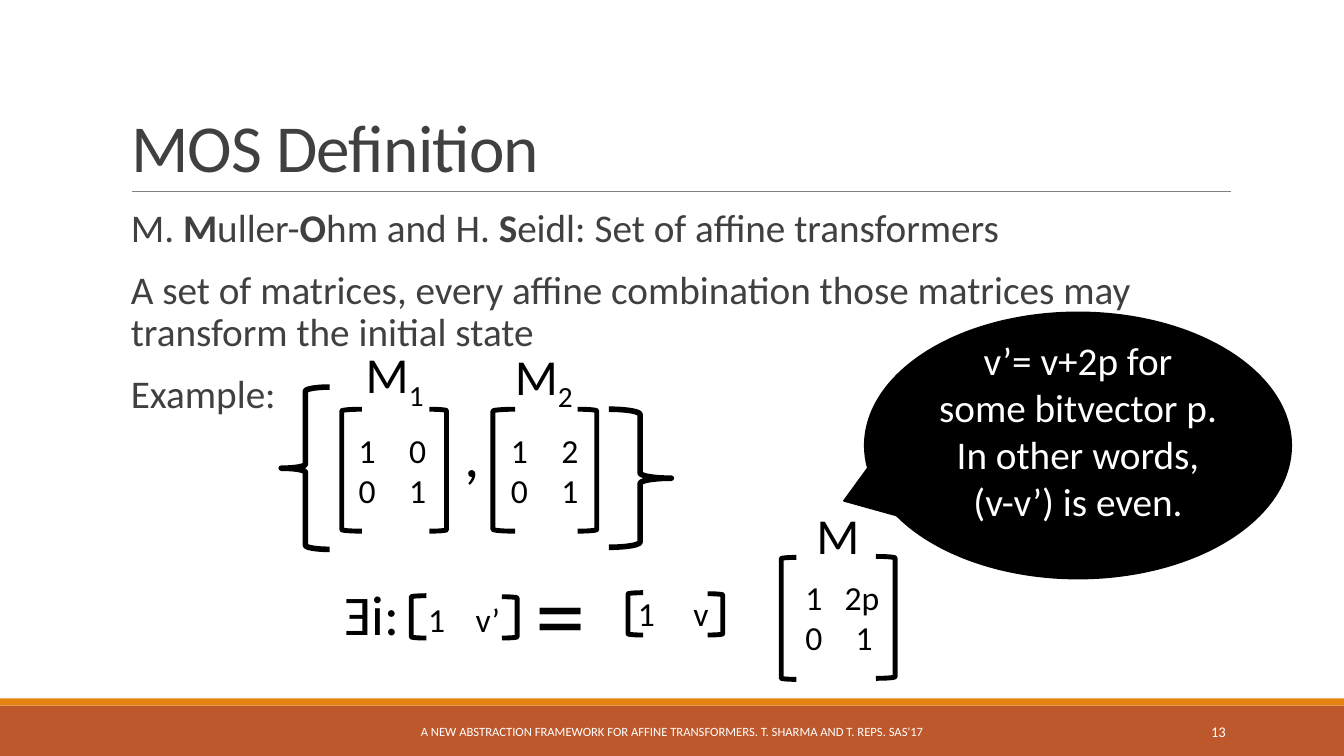
from dataclasses import dataclass
from typing import Any, NamedTuple

from lxml.etree import SubElement
from pptx import Presentation
from pptx.dml.color import RGBColor
from pptx.enum.shapes import MSO_CONNECTOR, MSO_SHAPE
from pptx.enum.text import MSO_ANCHOR, MSO_AUTO_SIZE, PP_ALIGN
from pptx.oxml.ns import qn
from pptx.util import Inches, Pt

ROWS = 75
SLIDE_W, SLIDE_H = Inches(13.333), Inches(7.5)
CELL = SLIDE_H / ROWS
COLS = SLIDE_W / CELL
BLACK, WHITE, GREY = "000000", "FFFFFF", "404040"
LEFT, CENTER, RIGHT = PP_ALIGN.LEFT, PP_ALIGN.CENTER, PP_ALIGN.RIGHT


class Box(NamedTuple):
    col: float
    row: float
    cols: float
    rows: float


class Run(NamedTuple):
    text: str
    bold: bool = False
    baseline: int = 0


class Para(NamedTuple):
    runs: list[Run]
    tab: float = 0


@dataclass
class Label:
    box: Box
    paras: list[Para]
    size: float
    color: str = BLACK
    align: Any = LEFT


@dataclass
class Outline:
    kind: Any
    box: Box
    weight: float = 3.5


def grid(n: float) -> int:
    return round(n * CELL)


def place(box: Box) -> list[int]:
    return [grid(n) for n in box]


def rgb(value: str) -> RGBColor:
    return RGBColor.from_string(value)


def apply(target: Any, values: dict[str, Any]) -> None:
    for name, value in values.items():
        setattr(target, name, value)


def line(text: str, tab: float = 0) -> Para:
    return Para([Run(text)], tab)


def write(tf: Any, paras: list[Para], size: float, color: str,
          frame: dict[str, Any], para: dict[str, Any]) -> None:
    apply(tf, {"word_wrap": True, "auto_size": MSO_AUTO_SIZE.NONE,
               "vertical_anchor": MSO_ANCHOR.MIDDLE} | frame)
    for i, item in enumerate(paras):
        p = tf.paragraphs[0] if i == 0 else tf.add_paragraph()
        apply(p, para)
        if item.tab:
            tabs = SubElement(p._p.get_or_add_pPr(), qn("a:tabLst"))
            SubElement(tabs, qn("a:tab"), pos=str(grid(item.tab)), algn="l")
        for run in item.runs:
            r = p.add_run()
            r.text = run.text
            apply(r.font, {"name": "Calibri", "size": Pt(size), "bold": run.bold})
            r.font.color.rgb = rgb(color)
            if run.baseline:
                r._r.get_or_add_rPr().set("baseline", str(run.baseline))


def add_label(s: Any, label: Label) -> None:
    tb = s.shapes.add_textbox(*place(label.box))
    write(tb.text_frame, label.paras, label.size, label.color, {},
          {"alignment": label.align})


def add_filled(s: Any, kind: Any, box: Box, color: str) -> Any:
    sp = s.shapes.add_shape(kind, *place(box))
    sp.shadow.inherit = False
    sp.fill.solid()
    sp.fill.fore_color.rgb = rgb(color)
    sp.line.fill.background()
    return sp


def add_outline(s: Any, outline: Outline) -> None:
    sp = s.shapes.add_shape(outline.kind, *place(outline.box))
    sp.shadow.inherit = False
    sp.fill.background()
    sp.line.color.rgb = rgb(BLACK)
    sp.line.width = Pt(outline.weight)


def add_rule(s: Any) -> None:
    cx = s.shapes.add_connector(MSO_CONNECTOR.STRAIGHT,
                                *[grid(n) for n in (13.1, 19, 122.1, 19)])
    cx.line.color.rgb = rgb("808080")
    cx.line.width = Pt(0.5)
    SubElement(cx._element.spPr, qn("a:effectLst"))


def add_title(s: Any) -> None:
    title = s.shapes.title
    apply(title, dict(zip(("left", "top", "width", "height"),
                          place(Box(12, 3.1, 110, 15.9)))))
    write(title.text_frame, [line("MOS Definition")], 48, GREY,
          {"vertical_anchor": MSO_ANCHOR.BOTTOM},
          {"alignment": LEFT, "line_spacing": 0.85})
    title.text_frame.paragraphs[0].runs[0]._r.get_or_add_rPr().set("spc", "-50")


def add_body(s: Any) -> None:
    authors = [Run("M. "), Run("M", True), Run("uller-"), Run("O", True),
               Run("hm and H. "), Run("S", True),
               Run("eidl: Set of affine transformers")]
    paras = [Para(authors),
             line("A set of matrices, every affine combination those matrices "
                  "may transform the initial state"),
             line("Example:")]
    tb = s.shapes.add_textbox(*place(Box(12, 20.2, 110, 44)))
    write(tb.text_frame, paras, 28, GREY,
          {"vertical_anchor": MSO_ANCHOR.TOP, "margin_left": grid(1),
           "margin_right": 0},
          {"line_spacing": 0.9, "space_before": Pt(12), "space_after": Pt(2)})


def add_callout(s: Any) -> None:
    sp = add_filled(s, MSO_SHAPE.OVAL_CALLOUT, Box(85.8, 31, 42.3, 26.4), BLACK)
    sp.adjustments[0], sp.adjustments[1] = -0.549, 0.208
    sp.line.color.rgb = rgb(BLACK)
    sp.line.width = Pt(1.25)
    write(sp.text_frame, [line("v’= v+2p for some bitvector p."),
                          line("In other words, (v-v’) is even.")],
          28, WHITE, {"margin_bottom": grid(3.5)}, {"alignment": CENTER})


OPEN, CLOSE = MSO_SHAPE.LEFT_BRACKET, MSO_SHAPE.RIGHT_BRACKET
OUTLINES = [
    Outline(OPEN, Box(33.9, 40.6, 2, 12.1)),
    Outline(CLOSE, Box(42.6, 40.6, 1.7, 12.1)),
    Outline(OPEN, Box(48.9, 40.6, 2.2, 12.1)),
    Outline(CLOSE, Box(57.3, 40.6, 1.9, 12.1)),
    Outline(OPEN, Box(77.5, 55.3, 1.5, 12.1)),
    Outline(CLOSE, Box(86.9, 55.2, 1.9, 12.1)),
    Outline(OPEN, Box(40.8, 59.1, 1.5, 4.2)),
    Outline(CLOSE, Box(49.8, 59.2, 1.5, 4.1)),
    Outline(OPEN, Box(62.3, 58.8, 1.5, 4.2)),
    Outline(CLOSE, Box(70.2, 58.9, 1.5, 4.1)),
    Outline(MSO_SHAPE.LEFT_BRACE, Box(27.9, 38.4, 4.8, 16.1), 4),
    Outline(MSO_SHAPE.RIGHT_BRACE, Box(60.4, 40.6, 6.2, 13.7), 4),
]
LABELS = [
    Label(Box(34.6, 41.8, 15.2, 9.7), [line("1\t0", 5), line("0\t1", 5)], 24),
    Label(Box(49.7, 41.8, 15.2, 9.7), [line("1\t2", 5), line("0\t1", 5)], 24),
    Label(Box(78.9, 56.4, 15.2, 9.7), [line("1\t2p", 3.9), line("0\t1", 5)], 24),
    Label(Box(41.5, 59.5, 14.4, 3.8), [line("1\tv’", 4.7)], 24),
    Label(Box(62.3, 59.2, 12, 3.2), [line("1\tv", 5.5)], 24),
    Label(Box(45.1, 38.6, 4.9, 12.7), [line(",")], 44),
    Label(Box(25.6, 54.5, 15, 12.7), [line("Ǝi:")], 40, align=RIGHT),
    Label(Box(52.1, 54.4, 6.6, 12.5), [line("=")], 72),
    Label(Box(35.3, 33.1, 8.3, 8.8), [Para([Run("M"), Run("1", baseline=-25000)])], 36),
    Label(Box(50.1, 33.2, 8.3, 8.8), [Para([Run("M"), Run("2", baseline=-25000)])], 36),
    Label(Box(80, 48.6, 8.3, 8.8), [line("M")], 36),
    Label(Box(40.3, 70.6, 52.7, 4),
          [line("A NEW ABSTRACTION FRAMEWORK FOR AFFINE TRANSFORMERS. "
                "T. SHARMA AND T. REPS. SAS'17")], 9, WHITE, CENTER),
    Label(Box(108.3, 70.6, 14.3, 4), [line("13")], 10.5, WHITE, RIGHT),
]


def main() -> None:
    prs = Presentation()
    apply(prs, {"slide_width": SLIDE_W, "slide_height": SLIDE_H})
    s = prs.slides.add_slide(prs.slide_layouts[5])
    add_filled(s, MSO_SHAPE.RECTANGLE, Box(0, 70, COLS, 5), "BD582C")
    add_filled(s, MSO_SHAPE.RECTANGLE, Box(0, 69.3, COLS, 0.7), "E48312")
    add_rule(s)
    add_title(s)
    add_body(s)
    add_callout(s)
    for outline in OUTLINES:
        add_outline(s, outline)
    for label in LABELS:
        add_label(s, label)
    prs.save("out.pptx")


if __name__ == "__main__":
    main()
